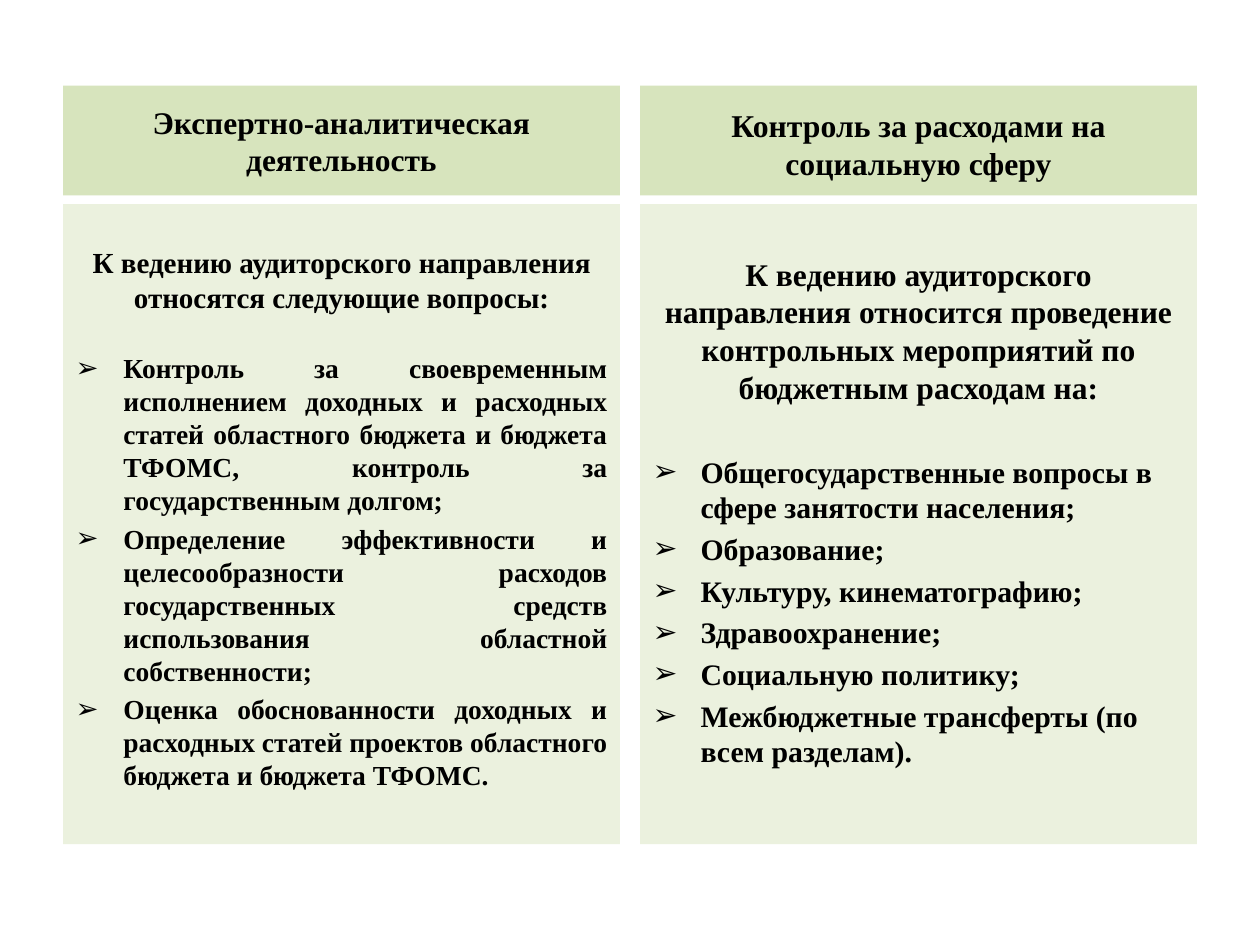
from dataclasses import dataclass

from lxml import etree
from pptx import Presentation
from pptx import util as u
from pptx.dml.color import RGBColor
from pptx.enum import text
from pptx.oxml.ns import qn

SLIDE_WIDTH, SLIDE_HEIGHT = 10, 7.5
MARGIN, COLUMN_GAP = 0.5, 0.16
COLUMN_WIDTH = (SLIDE_WIDTH - 2 * MARGIN - COLUMN_GAP) / 2
ROWS = {"heading": (0.68, 0.87), "body": (1.62, 5.08)}
COLORS = {"heading": "D7E4BD", "body": "EBF1DE", "text": "000000"}
FONT = "Times New Roman"
BULLET = "➢"
HANGING = 0.38
LEFT, CENTER, JUSTIFY = text.PP_ALIGN.LEFT, text.PP_ALIGN.CENTER, text.PP_ALIGN.JUSTIFY


@dataclass
class Direction:
    heading: str
    heading_size: float
    heading_inset: float
    intro: str
    intro_size: float
    intro_inset: float
    items: list[str]
    item_size: float
    item_align: text.PP_ALIGN
    list_gap: float


DIRECTIONS = [
    Direction(
        "Экспертно-аналитическая деятельность", 18, 0.05,
        "К ведению аудиторского направления относятся следующие вопросы:", 16.6, 0.32,
        [
            "Контроль за своевременным исполнением доходных и расходных статей "
            "областного бюджета и бюджета ТФОМС, контроль за государственным долгом;",
            "Определение эффективности и целесообразности расходов государственных "
            "средств использования областной собственности;",
            "Оценка обоснованности доходных и расходных статей проектов "
            "областного бюджета и бюджета ТФОМС.",
        ],
        15.7, JUSTIFY, 21.2,
    ),
    Direction(
        "Контроль за расходами на социальную сферу", 18.1, 0.1,
        "К ведению аудиторского направления относится проведение контрольных "
        "мероприятий по бюджетным расходам на:", 18, 0.4,
        [
            "Общегосударственные вопросы в сфере занятости населения;",
            "Образование;",
            "Культуру, кинематографию;",
            "Здравоохранение;",
            "Социальную политику;",
            "Межбюджетные трансферты (по всем разделам).",
        ],
        17, LEFT, 27.2,
    ),
]


def prepare_panel(shape, column: int, row: str, inset: float, anchor) -> None:
    top, height = ROWS[row]
    shape.left = u.Inches(MARGIN + column * (COLUMN_WIDTH + COLUMN_GAP))
    shape.top, shape.width, shape.height = map(u.Inches, (top, COLUMN_WIDTH, height))
    shape.fill.solid()
    shape.fill.fore_color.rgb = RGBColor.from_string(COLORS[row])
    frame = shape.text_frame
    frame.word_wrap = True
    frame.auto_size = text.MSO_AUTO_SIZE.NONE
    frame.vertical_anchor = anchor
    frame.margin_top = u.Inches(inset)


def write_paragraph(paragraph, content: str, size: float, align: text.PP_ALIGN,
                    space_before: float, bulleted: bool = False) -> None:
    paragraph.alignment = align
    paragraph.space_before = u.Pt(space_before)
    properties = paragraph._p.get_or_add_pPr()
    hanging = u.Inches(HANGING) if bulleted else 0
    properties.set("marL", str(hanging))
    properties.set("indent", str(-hanging))
    if bulleted:
        etree.SubElement(properties, qn("a:buChar")).set("char", BULLET)
    else:
        etree.SubElement(properties, qn("a:buNone"))
    run = paragraph.add_run()
    run.text = content
    run.font.name = FONT
    run.font.size = u.Pt(size)
    run.font.bold = True
    run.font.color.rgb = RGBColor.from_string(COLORS["text"])


def draw_direction(heading, body, column: int, direction: Direction) -> None:
    prepare_panel(heading, column, "heading", direction.heading_inset, text.MSO_ANCHOR.MIDDLE)
    write_paragraph(heading.text_frame.paragraphs[0], direction.heading,
                    direction.heading_size, CENTER, direction.heading_size * 0.2)
    prepare_panel(body, column, "body", direction.intro_inset, text.MSO_ANCHOR.TOP)
    write_paragraph(body.text_frame.paragraphs[0], direction.intro,
                    direction.intro_size, CENTER, 0)
    for index, item in enumerate(direction.items):
        gap = direction.item_size * 0.2 if index else direction.list_gap
        write_paragraph(body.text_frame.add_paragraph(), item, direction.item_size,
                        direction.item_align, gap, bulleted=True)


def main() -> None:
    presentation = Presentation()
    presentation.slide_width = u.Inches(SLIDE_WIDTH)
    presentation.slide_height = u.Inches(SLIDE_HEIGHT)
    slide = presentation.slides.add_slide(presentation.slide_layouts.get_by_name("Comparison"))
    title = slide.shapes.title._element
    title.getparent().remove(title)
    placeholders = list(slide.placeholders)
    for column, direction in enumerate(DIRECTIONS):
        heading, body = placeholders[2 * column:2 * column + 2]
        draw_direction(heading, body, column, direction)
    presentation.save("out.pptx")


if __name__ == "__main__":
    main()
